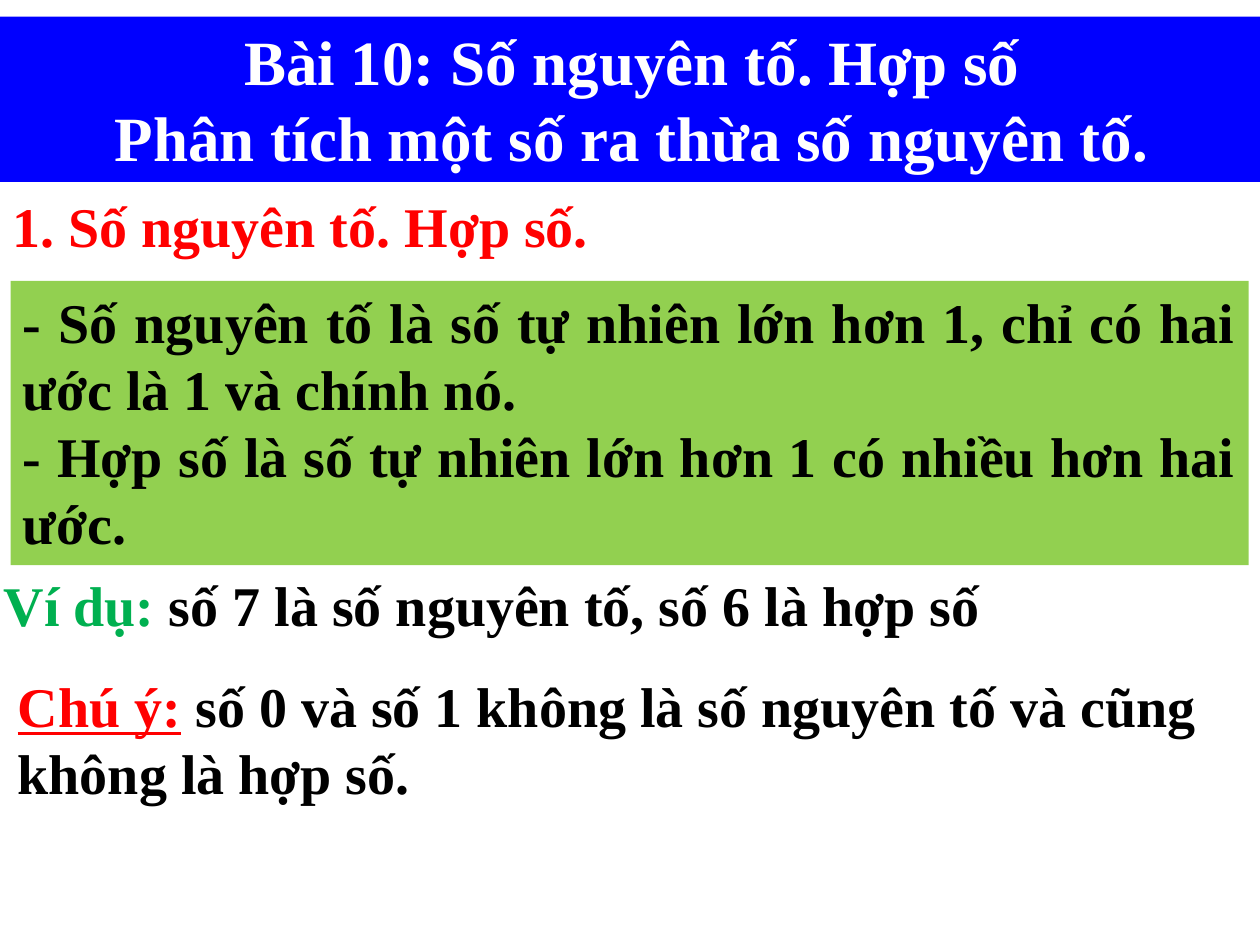
from pptx import Presentation
from pptx.dml.color import RGBColor
from pptx.enum.text import MSO_AUTO_SIZE, PP_ALIGN
from pptx.util import Pt

LEFT, CENTER, JUSTIFY = PP_ALIGN.LEFT, PP_ALIGN.CENTER, PP_ALIGN.JUSTIFY
FIT_SHAPE = MSO_AUTO_SIZE.SHAPE_TO_FIT_TEXT
BLACK, WHITE, RED, GREEN = "000000", "FFFFFF", "FF0000", "00B050"
LIME, BLUE = "92D050", "0000FF"


def color(value):
    return RGBColor.from_string(value)


presentation = Presentation()
presentation.slide_width, presentation.slide_height = Pt(720), Pt(540)
slide = presentation.slides.add_slide(presentation.slide_layouts[6])

# Each block: position, fill, alignment, size, paragraphs of (text, color, underline)
blocks = [
    # Definitions
    ((6, 160.5, 707.5, 162.5), LIME, JUSTIFY, 32, [
        [("- Số nguyên tố là số tự nhiên lớn hơn 1, chỉ có hai ước là 1 và chính nó.", BLACK, False)],
        [("- Hợp số là số tự nhiên lớn hơn 1 có nhiều hơn hai ước.", BLACK, False)],
    ]),
    # Lesson title
    ((0, 9.5, 722, 94.5), BLUE, CENTER, 36, [
        [("Bài 10: Số nguyên tố. Hợp số", WHITE, False)],
        [("Phân tích một số ra thừa số nguyên tố.", WHITE, False)],
    ]),
    # Section heading
    ((0, 106, 494, 46), None, LEFT, 32, [
        [("1. Số nguyên tố. Hợp số.", RED, False)],
    ]),
    # Example
    ((-5, 322.5, 725, 46), None, LEFT, 32, [
        [("Ví dụ: ", GREEN, False),
         ("số 7 là số nguyên tố, số 6 là hợp số", BLACK, False)],
    ]),
    # Note
    ((3, 380, 722, 85), None, LEFT, 32, [
        [("Chú ý:", RED, True),
         (" số 0 và số 1 không là số nguyên tố và cũng không là hợp số.", BLACK, False)],
    ]),
]

for position, fill, alignment, size, paragraphs in blocks:
    shape = slide.shapes.add_textbox(*map(Pt, position))
    if fill:
        shape.fill.solid()
        shape.fill.fore_color.rgb = color(fill)
    frame = shape.text_frame
    frame.word_wrap = True
    frame.auto_size = FIT_SHAPE
    for index, runs in enumerate(paragraphs):
        paragraph = frame.add_paragraph() if index else frame.paragraphs[0]
        paragraph.alignment = alignment
        paragraph.font.name = "Times New Roman"
        paragraph.font.size = Pt(size)
        paragraph.font.bold = True
        for text, text_color, underline in runs:
            run = paragraph.add_run()
            run.text = text
            run.font.color.rgb = color(text_color)
            if underline:
                run.font.underline = True

presentation.save("out.pptx")
